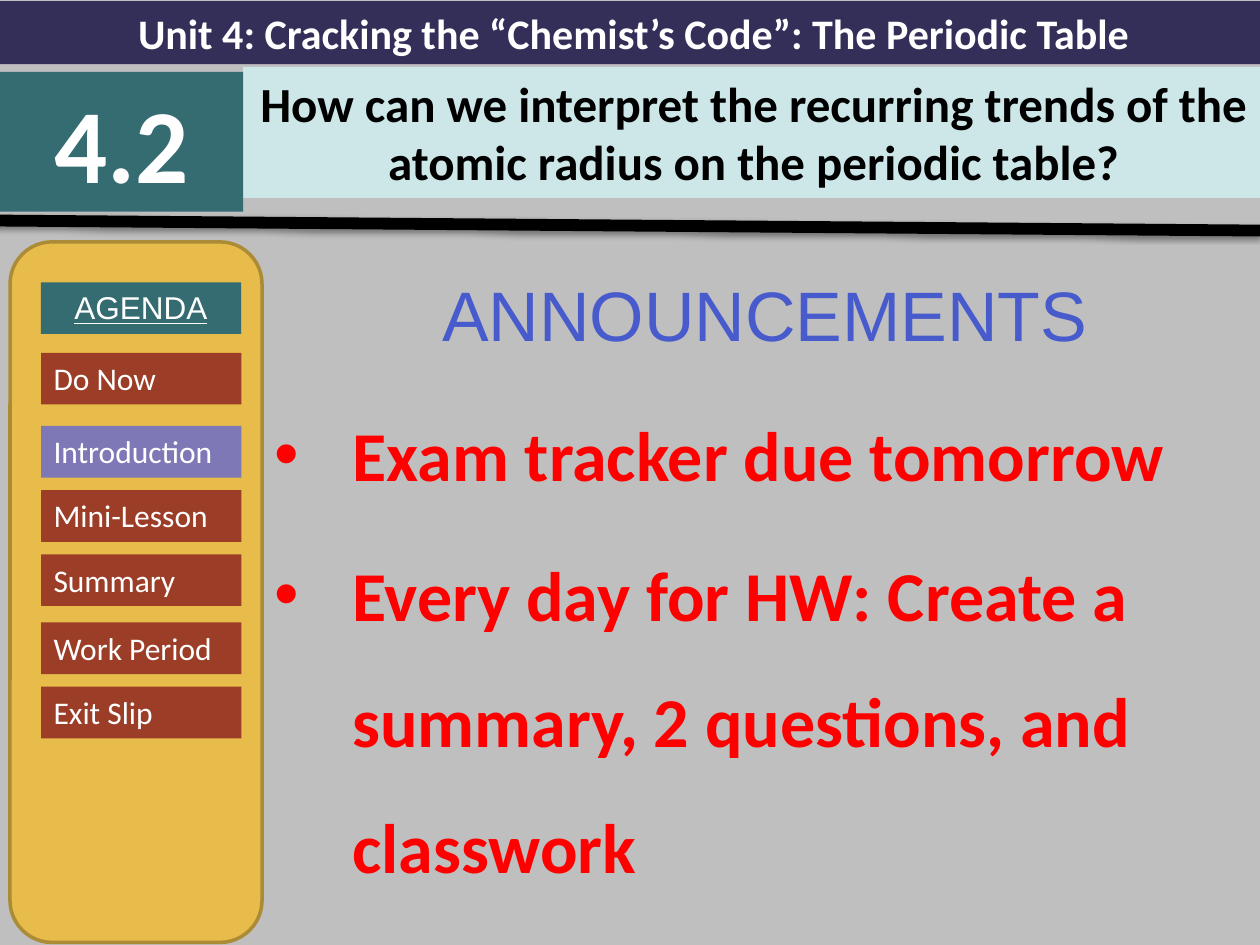
from dataclasses import dataclass

import lxml.etree
import pptx
import pptx.dml.color
import pptx.enum.shapes
import pptx.enum.text
import pptx.oxml
import pptx.oxml.ns
import pptx.util

Pt = pptx.util.Pt
Color = pptx.dml.color.RGBColor
Align = pptx.enum.text.PP_ALIGN
qn = pptx.oxml.ns.qn

GREY = Color(0xBF, 0xBF, 0xBF)
NAVY = Color(0x34, 0x2F, 0x59)
TEAL = Color(0x34, 0x6C, 0x71)
PALE_TEAL = Color(0xCD, 0xE6, 0xE8)
GOLD = Color(0xE8, 0xBC, 0x4A)
DARK_GOLD = Color(0xAC, 0x8B, 0x37)
BRICK = Color(0x9C, 0x3D, 0x28)
LILAC = Color(0x7E, 0x78, 0xB7)
BLUE = Color(0x47, 0x5B, 0xCD)
RED = Color(0xFF, 0, 0)
WHITE = Color(0xFF, 0xFF, 0xFF)
BLACK = Color(0, 0, 0)


@dataclass
class Label:
    text: str
    left: float
    top: float
    width: float
    height: float
    fill: Color
    size: float = 18
    color: Color = WHITE
    font: str = "Calibri"
    bold: bool = False
    underline: bool = False
    align: Align = Align.CENTER


@dataclass
class AgendaItem:
    text: str
    top: float
    fill: Color = BRICK


BANNER = Label("Unit 4: Cracking the “Chemist’s Code”: The Periodic Table",
               0, 0.72, 724.32, 36, NAVY, 24, bold=True)
LESSON = Label("4.2", 0, 41.04, 138.96, 79.92, TEAL, 60, bold=True)
QUESTION = Label("How can we interpret the recurring trends of the atomic radius "
                 "on the periodic table?",
                 138.96, 38.16, 583.2, 74.88, PALE_TEAL, 28, BLACK, bold=True)
AGENDA_TITLE = Label("AGENDA", 23.3, 161.3, 114.5, 29.52, TEAL,
                     font="Arial", underline=True)
AGENDA = [
    AgendaItem("Do Now", 201.6),
    AgendaItem("Introduction", 243.4, LILAC),
    AgendaItem("Mini-Lesson", 280.1),
    AgendaItem("Summary", 316.8),
    AgendaItem("Work Period", 355.7),
    AgendaItem("Exit Slip", 392.4),
]
ANNOUNCEMENTS = [
    "Exam tracker due tomorrow",
    "Every day for HW: Create a summary, 2 questions, and classwork",
]


def format_font(para, name: str, size: float, color: Color, bold: bool = False) -> None:
    para.font.name = name
    para.font.size = Pt(size)
    para.font.bold = bold
    para.font.color.rgb = color


def format_label(box, label: Label) -> None:
    box.left, box.top = Pt(label.left), Pt(label.top)
    box.width, box.height = Pt(label.width), Pt(label.height)
    box.fill.solid()
    box.fill.fore_color.rgb = label.fill
    frame = box.text_frame
    frame.text = label.text
    frame.word_wrap = True
    frame.auto_size = pptx.enum.text.MSO_AUTO_SIZE.SHAPE_TO_FIT_TEXT
    frame.vertical_anchor = pptx.enum.text.MSO_ANCHOR.TOP
    para = frame.paragraphs[0]
    para.alignment = label.align
    format_font(para, label.font, label.size, label.color, label.bold)
    if label.underline:
        para.font.underline = True


def add_label(shapes, label: Label) -> None:
    format_label(shapes.add_textbox(0, 0, 0, 0), label)


def add_bullet(para, indent: float) -> None:
    properties = para._p.get_or_add_pPr()
    properties.set("marL", str(Pt(indent)))
    properties.set("indent", str(-Pt(indent)))
    lxml.etree.SubElement(properties, qn("a:buFont"), typeface="Arial")
    lxml.etree.SubElement(properties, qn("a:buChar"), char="•")


def add_announcements(shapes) -> None:
    frame = shapes.add_textbox(Pt(149.76), Pt(146.88), Pt(574.56), Pt(393.12)).text_frame
    frame.word_wrap = True
    heading = frame.paragraphs[0]
    heading.text = "ANNOUNCEMENTS"
    heading.alignment = Align.CENTER
    heading.line_spacing = 1.1
    heading.space_before = Pt(8)
    format_font(heading, "Arial", 40, BLUE)
    for text in ANNOUNCEMENTS:
        para = frame.add_paragraph()
        para.text = text
        para.line_spacing = 1.5
        para.space_before = Pt(8)
        format_font(para, "Calibri", 40, RED, bold=True)
        add_bullet(para, 44.64)


def add_divider(shapes) -> None:
    line = shapes.add_connector(pptx.enum.shapes.MSO_CONNECTOR.STRAIGHT,
                                Pt(-3.6), Pt(126), Pt(720), Pt(131.76))
    line.line.color.rgb = BLACK
    line.line.width = Pt(6.75)
    effects = lxml.etree.SubElement(line._element.spPr, qn("a:effectLst"))
    shadow = lxml.etree.SubElement(effects, qn("a:outerShdw"), blurRad=str(Pt(3.1)),
                                   dist=str(Pt(1.6)), dir="5400000", rotWithShape="0")
    color = lxml.etree.SubElement(shadow, qn("a:srgbClr"), val=str(BLACK))
    lxml.etree.SubElement(color, qn("a:alpha"), val="38000")


def add_agenda(shapes) -> None:
    panel = shapes.add_shape(pptx.enum.shapes.MSO_SHAPE.ROUNDED_RECTANGLE,
                             Pt(5.76), Pt(138.24), Pt(144), Pt(400.32))
    panel.shadow.inherit = False
    panel.fill.solid()
    panel.fill.fore_color.rgb = GOLD
    panel.line.color.rgb = DARK_GOLD
    panel.line.width = Pt(2)
    add_label(shapes, AGENDA_TITLE)
    for item in AGENDA:
        add_label(shapes, Label(item.text, 23.5, item.top, 114.5, 29.52,
                                item.fill, align=Align.LEFT))


def main() -> None:
    deck = pptx.Presentation()
    deck.slide_width, deck.slide_height = Pt(720), Pt(540)
    page = deck.slides.add_slide(deck.slide_layouts[5])
    page.background.fill.solid()
    page.background.fill.fore_color.rgb = GREY
    format_label(page.shapes.title, QUESTION)
    add_announcements(page.shapes)
    add_label(page.shapes, BANNER)
    add_label(page.shapes, LESSON)
    add_divider(page.shapes)
    add_agenda(page.shapes.add_group_shape().shapes)
    deck.save("out.pptx")


if __name__ == "__main__":
    main()
